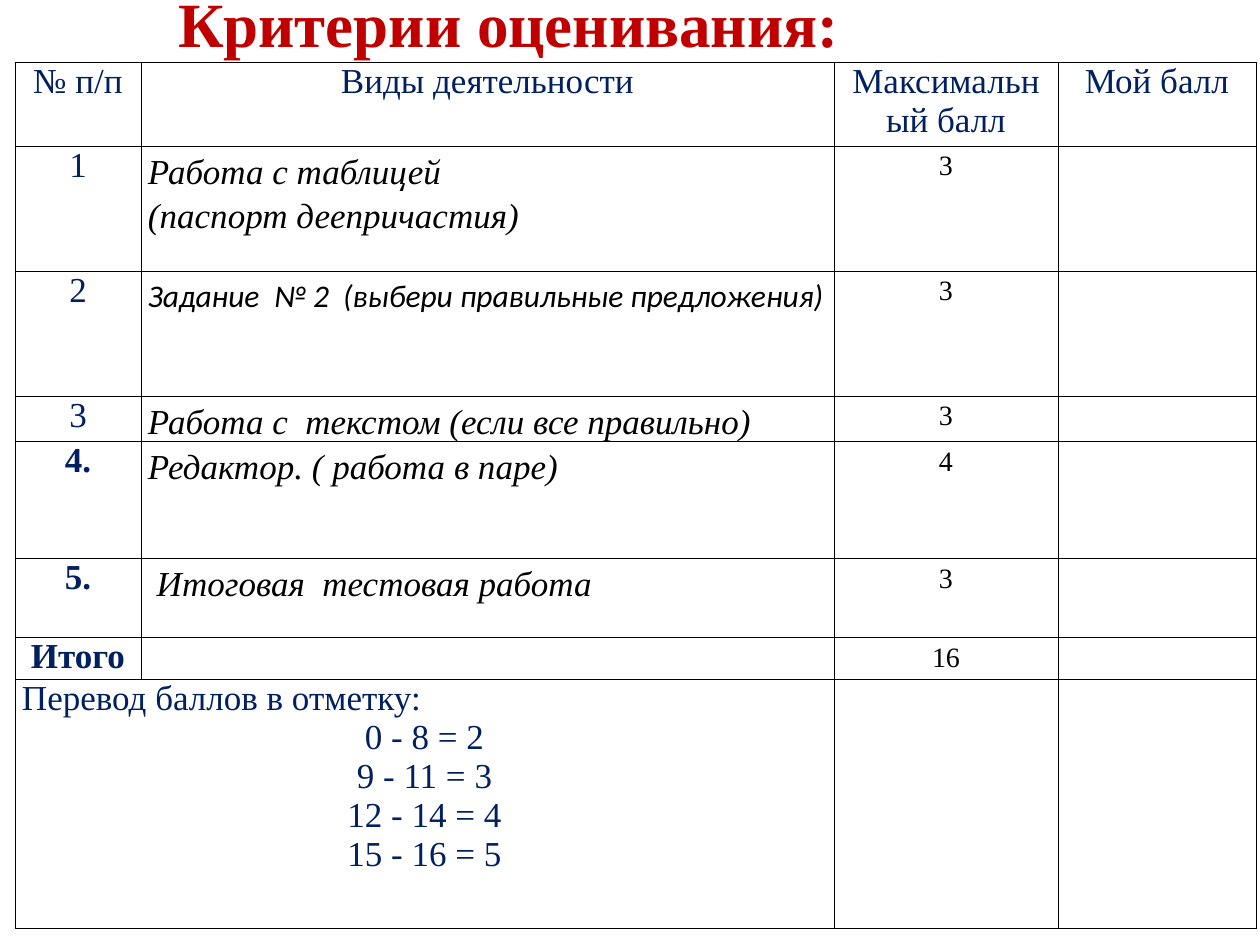
from lxml import etree
from pptx import Presentation
from pptx.dml.color import RGBColor
from pptx.enum.text import MSO_ANCHOR, MSO_AUTO_SIZE, PP_ALIGN
from pptx.oxml.ns import qn
from pptx.util import Emu, Pt

RED = RGBColor(0xC0, 0x00, 0x00)
NAVY = RGBColor(0x00, 0x20, 0x60)
BLACK = RGBColor(0x00, 0x00, 0x00)
SERIF = "Times New Roman"
CENTER, LEFT = PP_ALIGN.CENTER, PP_ALIGN.LEFT


def px(n):
    return Emu(round(n * 914400 / 126))


def write(cell, lines, size=20, color=NAVY, bold=False, italic=False,
          font=SERIF, align=CENTER, space=1.0):
    frame = cell.text_frame
    for i, line in enumerate(lines):
        para = frame.add_paragraph() if i else frame.paragraphs[0]
        para.alignment = align
        para.line_spacing = space
        run = para.add_run()
        run.text = line
        run.font.size = Pt(size)
        run.font.name = font
        run.font.bold = bold
        run.font.italic = italic
        run.font.color.rgb = color


prs = Presentation()
prs.slide_width, prs.slide_height = px(1260), px(945)
slide = prs.slides.add_slide(prs.slide_layouts[5])

title = slide.shapes.title
title.left, title.top, title.width, title.height = px(0), px(0), px(1017), px(45)
title.text_frame.auto_size = MSO_AUTO_SIZE.NONE
title.text_frame.vertical_anchor = MSO_ANCHOR.MIDDLE
write(title, ["Критерии оценивания:"], size=36, color=RED, bold=True)

widths = [126, 693, 224, 198]
heights = [84, 125, 125, 42, 117, 79, 42, 249]
frame = slide.shapes.add_table(len(heights), len(widths), px(15), px(62),
                               px(sum(widths)), px(sum(heights)))
table = frame.table
table.first_row = table.horz_banding = False
for col, width in zip(table.columns, widths):
    col.width = px(width)
for row, height in zip(table.rows, heights):
    row.height = px(height)

# Rules are 0.5 pt, but 1 pt below rows 3 to 5
rules = [0.5, 0.5, 0.5, 0.5, 1, 1, 1, 0.5, 0.5]
for r, row in enumerate(table.rows):
    for c, cell in enumerate(row.cells):
        side = 0 if c == 2 and r else 7
        cell.margin_left = cell.margin_right = px(side)
        cell.margin_top = px(1 if c == 1 and 0 < r < 6 else 0)
        cell.margin_bottom = px(0)
        props = cell._tc.get_or_add_tcPr()
        edges = {"lnL": 0.5, "lnR": 0.5, "lnT": rules[r], "lnB": rules[r + 1]}
        for tag, width in edges.items():
            line = etree.SubElement(props, qn(f"a:{tag}"), w=str(Pt(width)))
            fill = etree.SubElement(line, qn("a:solidFill"))
            etree.SubElement(fill, qn("a:srgbClr"), val=str(BLACK))
        cell.fill.background()

heads = ["№ п/п", "Виды деятельности", "Максимальный балл", "Мой балл"]
for c, head in enumerate(heads):
    write(table.cell(0, c), [head])

tasks = [
    ("1", ["Работа с таблицей", "(паспорт деепричастия)"], "3"),
    ("2", ["Задание  № 2  (выбери правильные предложения)"], "3"),
    ("3", ["Работа с  текстом (если все правильно)"], "3"),
    ("4.", ["Редактор. ( работа в паре)"], "4"),
    ("5.", [" Итоговая  тестовая работа"], "3"),
    ("Итого", [], "16"),
]
for r, (label, task, score) in enumerate(tasks, 1):
    size, font = (18, "Calibri") if r == 2 else (20, SERIF)
    write(table.cell(r, 0), [label], bold=r > 3)
    write(table.cell(r, 1), task, size=size, font=font, color=BLACK,
          italic=True, align=LEFT, space=1.15)
    write(table.cell(r, 2), [score], size=16, color=BLACK, space=1.15)

marks = table.cell(7, 0)
marks.merge(table.cell(7, 1))
write(marks, ["Перевод баллов в отметку:", "0 - 8 = 2", "9 - 11 = 3",
              "12 - 14 = 4", "15 - 16 = 5"])
marks.text_frame.paragraphs[0].alignment = LEFT

prs.save("out.pptx")
